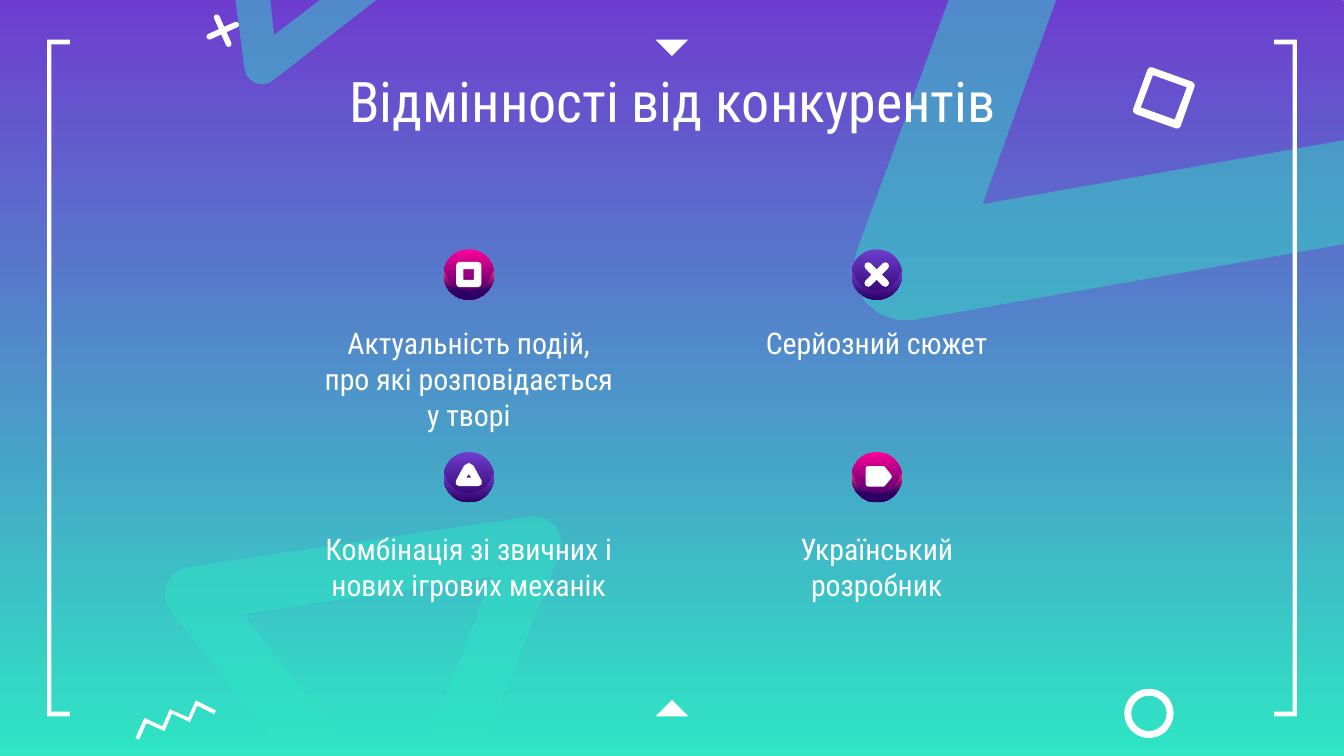
from dataclasses import dataclass
from math import cos, hypot, radians, sin, sqrt
from typing import Callable, NamedTuple, Optional

from lxml.etree import SubElement
from pptx import Presentation
from pptx.dml.color import RGBColor
from pptx.enum.shapes import MSO_SHAPE
from pptx.enum.text import MSO_ANCHOR, PP_ALIGN
from pptx.oxml.ns import qn
from pptx.util import Cm, Pt


@dataclass(frozen=True)
class Theme:
    white: str = "FFFFFF"
    violet: str = "6E3DCF"
    mint: str = "2EE6C4"
    pink: str = "FF0098"
    raspberry: str = "F42579"
    night: str = "2D0066"
    font: str = "Roboto Condensed"
    title_size: int = 30
    body_size: int = 16


class Corner(NamedTuple):
    x: float
    y: float
    radius: float = 0


Contour = list[Corner]


class Advantage(NamedTuple):
    text: str
    x: float
    y: float
    text_top: float
    pink: bool
    symbol: list[Contour]


THEME = Theme()
WIDTH, HEIGHT = 25.4, 14.29


# Geometry, in centimetres
def contour(*points: tuple, radius: float = 0) -> Contour:
    return [Corner(p[0], p[1], p[2] if len(p) > 2 else radius) for p in points]


def round_corner(before: Corner, corner: Corner, after: Corner) -> list[tuple]:
    """Points of the circular arc that replaces a corner."""
    if not corner.radius:
        return [(corner.x, corner.y)]
    (ax, ay), (bx, by) = [
        ((p.x - corner.x) / hypot(p.x - corner.x, p.y - corner.y),
         (p.y - corner.y) / hypot(p.x - corner.x, p.y - corner.y))
        for p in (before, after)]
    weight = sqrt((1 - ax * bx - ay * by) / 2)
    trim = corner.radius * sqrt(1 - weight ** 2) / weight
    steps = 6 if corner.radius > 0.2 else 2
    points = []
    for step in range(steps + 1):
        t = step / steps
        start, end = (1 - t) ** 2, t ** 2
        total = start + 2 * weight * t * (1 - t) + end
        points.append((corner.x + trim * (start * ax + end * bx) / total,
                       corner.y + trim * (start * ay + end * by) / total))
    return points


def outline(corners: Contour) -> list[tuple]:
    points = []
    for i, corner in enumerate(corners):
        points += round_corner(corners[i - 1], corner, corners[(i + 1) % len(corners)])
    return [(Cm(x), Cm(y)) for x, y in points]


def moved(corners: Contour, dx: float, dy: float) -> Contour:
    return [Corner(c.x + dx, c.y + dy, c.radius) for c in corners]


def cross(reach: float, half: float, radius: float, angle: float) -> Contour:
    corners = []
    for turn in range(4):
        a = radians(angle + 90 * turn)
        for x, y, r in ((reach, -half, radius), (reach, half, radius), (half, half, 0)):
            corners.append(Corner(x * cos(a) - y * sin(a), x * sin(a) + y * cos(a), r))
    return corners


def arc(radius: float, cy: float, start: int, end: int, steps: int = 8) -> Contour:
    return [Corner(radius * cos(a), cy + radius * sin(a))
            for a in (radians(start + (end - start) * i / steps) for i in range(steps + 1))]


def square(half: float, radius: float = 0) -> Contour:
    return contour((-half, -half), (half, -half), (half, half), (-half, half), radius=radius)


# Drawing
def set_gradient(fill, top: str, bottom: str, end: float = 1) -> None:
    fill.gradient()
    fill.gradient_angle = 270
    for stop, color, position in zip(fill.gradient_stops, (top, bottom), (0, end)):
        stop.color.rgb = RGBColor.from_string(color)
        stop.position = position


def finish(shape, color: str, opacity: Optional[int] = None) -> None:
    shape.shadow.inherit = False
    shape.line.fill.background()
    shape.fill.solid()
    shape.fill.fore_color.rgb = RGBColor.from_string(color)
    if opacity is not None:
        srgb = shape.element.spPr.find(".//" + qn("a:srgbClr"))
        SubElement(srgb, qn("a:alpha")).set("val", str(opacity * 1000))


def add_outline(slide, *contours: Contour, color: str = THEME.white,
                opacity: Optional[int] = None):
    first, *holes = [outline(c) for c in contours]
    builder = slide.shapes.build_freeform(*first[0], scale=1.0)
    builder.add_line_segments(first[1:], close=True)
    for hole in holes:
        builder.move_to(*hole[0])
        builder.add_line_segments(hole[1:], close=True)
    shape = builder.convert_to_shape()
    finish(shape, color, opacity)
    return shape


def add_text(slide, text: str, *, left: float, top: float, width: float, height: float,
             size: int, inset_top: float = 0.25, inset_bottom: float = 0.25) -> None:
    frame = slide.shapes.add_textbox(Cm(left), Cm(top), Cm(width), Cm(height)).text_frame
    frame.word_wrap = True
    frame.vertical_anchor = MSO_ANCHOR.TOP
    frame.margin_left = frame.margin_right = Cm(0.25)
    frame.margin_top, frame.margin_bottom = Cm(inset_top), Cm(inset_bottom)
    paragraph = frame.paragraphs[0]
    paragraph.alignment = PP_ALIGN.CENTER
    run = paragraph.add_run()
    run.text = text
    run.font.name, run.font.size = THEME.font, Pt(size)
    run.font.color.rgb = RGBColor.from_string(THEME.white)


def add_advantage(slide, item: Advantage) -> None:
    radius = 0.475
    disc = slide.shapes.add_shape(MSO_SHAPE.OVAL, Cm(item.x - radius), Cm(item.y - radius),
                                  Cm(2 * radius), Cm(2 * radius))
    finish(disc, THEME.night)
    set_gradient(disc.fill, THEME.pink if item.pink else THEME.violet, THEME.night)
    rim = arc(radius, 0, -7, 187) + arc(radius, -0.155, 169, 11)
    shade = add_outline(slide, moved(rim, item.x, item.y))
    set_gradient(shade.fill, THEME.raspberry if item.pink else THEME.violet,
                 THEME.night, 0.67 if item.pink else 1)
    add_outline(slide, *[moved(c, item.x, item.y) for c in item.symbol])
    add_text(slide, item.text, left=item.x - 3, top=item.text_top, width=6, height=2.11,
             size=THEME.body_size, inset_top=0.46, inset_bottom=0)


# Content
BIG_TRIANGLES = [
    [contour((2.66, 10.85, 0.52), (10.91, 9.63, 0.52), (8.1, 16.74), (6.96, 16.21)),
     contour((9.3, 10.9), (4.6, 11.61), (7.57, 15.34))],
    [contour((27.89, 0), (28.83, 1.12), (28.83, 4.01), (15.61, 6.34, 0.97), (17.93, 0),
             (19.96, 0), (18.57, 3.86), (27.33, 2.31), (25.37, 0))],
    [contour((7.11, 0), (4.7, 1.88, 0.33), (4.45, 0), (5.11, 0), (5.18, 0.66), (6.05, 0))],
]
TILTED_SQUARE = [
    contour((21.71, 1.25), (22.6, 1.57), (22.29, 2.45), (21.39, 2.13), radius=0.07),
    contour((21.79, 1.42), (22.43, 1.65), (22.2, 2.26), (21.56, 2.03))]
ZIGZAG = contour(
    (2.56, 13.95), (2.73, 13.57), (3.07, 13.73), (3.21, 13.41), (3.56, 13.56), (3.7, 13.24),
    (4.08, 13.43), (4.05, 13.5), (3.73, 13.34), (3.59, 13.65), (3.25, 13.49), (3.11, 13.82),
    (2.77, 13.67), (2.63, 13.98))
FRAME_TOP, FRAME_BOTTOM = 0.75, 13.54
BRACKET = [(0.89, FRAME_TOP), (0.89, FRAME_BOTTOM), (1.32, FRAME_BOTTOM),
           (1.32, FRAME_BOTTOM - 0.09), (0.97, FRAME_BOTTOM - 0.09),
           (0.97, FRAME_TOP + 0.09), (1.32, FRAME_TOP + 0.09), (1.32, FRAME_TOP)]
SIDES: list[Callable[[float], float]] = [lambda x: x, lambda x: WIDTH - x]

LEFT, RIGHT, UPPER, LOWER = 8.86, 16.57, 5.19, 9.02
ADVANTAGES = [
    Advantage("Комбінація зі звичних і нових ігрових механік", LEFT, LOWER, 9.58, False,
              [contour((0, -0.38, 0.1), (0.3, 0.17, 0.07), (-0.3, 0.17, 0.07)),
               contour((0, -0.06), (0.05, 0.01), (-0.05, 0.01))]),
    Advantage("Український розробник", RIGHT, LOWER, 9.58, True,
              [contour((-0.21, -0.21), (0.14, -0.21), (0.3, -0.01), (0.14, 0.18),
                       (-0.21, 0.18), radius=0.05)]),
    Advantage("Актуальність подій, про які розповідається у творі", LEFT, UPPER, 5.68, True,
              [square(0.24, 0.07), square(0.1)]),
    Advantage("Серйозний сюжет", RIGHT, UPPER, 5.68, False, [cross(0.3, 0.07, 0.07, 45)]),
]


def main() -> None:
    deck = Presentation()
    deck.slide_width, deck.slide_height = Cm(WIDTH), Cm(HEIGHT)
    slide = deck.slides.add_slide(deck.slide_layouts[6])
    set_gradient(slide.background.fill, THEME.violet, THEME.mint)

    # Decorations
    for triangle in BIG_TRIANGLES:
        add_outline(slide, *triangle, color=THEME.mint, opacity=45)
    for base, apex in ((FRAME_TOP, 1.06), (FRAME_BOTTOM, 13.23)):
        add_outline(slide, contour((12.39, base), (WIDTH / 2, apex), (13.01, base)))
    add_outline(slide, *TILTED_SQUARE)
    add_outline(slide, moved(cross(0.33, 0.055, 0.05, -24), 4.21, 0.58))
    for side in SIDES:
        add_outline(slide, contour(*[(side(x), y) for x, y in BRACKET]))
    add_outline(slide, ZIGZAG)
    ring = slide.shapes.add_shape(MSO_SHAPE.DONUT, Cm(21.25), Cm(13.02), Cm(0.93), Cm(0.93))
    ring.adjustments[0] = 0.14
    finish(ring, THEME.white)

    # Title and advantages
    add_text(slide, "Відмінності від конкурентів", left=2.63, top=1.01, width=20.18,
             height=2.31, size=THEME.title_size)
    for item in ADVANTAGES:
        add_advantage(slide, item)
    deck.save("out.pptx")


if __name__ == "__main__":
    main()
